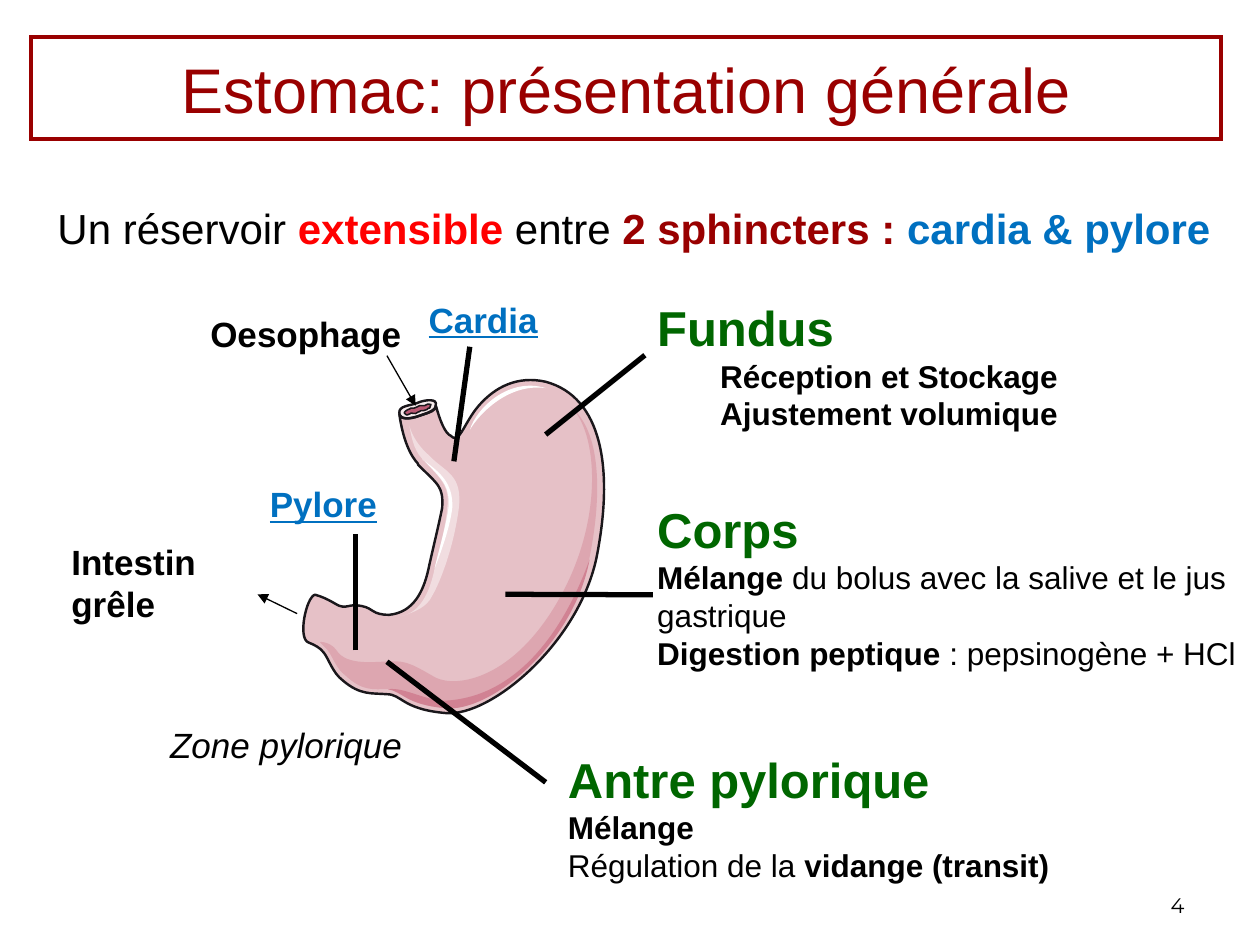
from dataclasses import dataclass

from lxml import etree
from pptx import Presentation
from pptx.dml.color import RGBColor
from pptx.enum.shapes import MSO_CONNECTOR, MSO_SHAPE
from pptx.enum.text import MSO_ANCHOR, PP_ALIGN
from pptx.oxml.ns import qn
from pptx.util import Cm, Pt

STRAIGHT = MSO_CONNECTOR.STRAIGHT
RECTANGLE = MSO_SHAPE.RECTANGLE
TOP, MIDDLE, BOTTOM = MSO_ANCHOR.TOP, MSO_ANCHOR.MIDDLE, MSO_ANCHOR.BOTTOM
LEFT, CENTER, RIGHT = PP_ALIGN.LEFT, PP_ALIGN.CENTER, PP_ALIGN.RIGHT


@dataclass(frozen=True)
class Theme:
    font: str = "Arial"
    number_font: str = "Montserrat"
    black: str = "000000"
    dark_red: str = "990000"
    red: str = "FF0000"
    blue: str = "0070C0"
    green: str = "006600"
    contour: str = "1A171B"
    tissue: str = "E6C1C7"
    shade: str = "DDA6B0"
    deep_shade: str = "D18293"
    gleam: str = "F1DDE0"
    bright_gleam: str = "FFFFFF"
    rim: str = "F7ECED"
    lumen: str = "BB5A74"
    title: int = 36
    region: int = 28
    lead: int = 24
    label: int = 20
    detail: int = 18
    number: int = 12


THEME = Theme()
OUTLINE_UNIT = Cm(0.0254)

STOMACH = (
    (245, 510), (250, 512, 254, 514, 257, 518), (261, 523, 264, 534, 272, 540),
    (286, 552, 295, 550, 307, 551), (319, 551, 319, 563, 354, 566),
    (390, 569, 461, 509, 474, 440), (487, 372, 478, 315, 433, 303),
    (411, 298, 393, 307, 380, 322), (372, 331, 367, 344, 363, 347),
    (361, 348, 360, 348, 358, 346), (353, 344, 349, 333, 346, 322),
    (346, 326, 342, 327, 333, 330), (325, 333, 318, 333, 317, 329),
    (319, 343, 323, 357, 330, 366), (331, 367, 332, 368, 332, 369),
    (348, 385, 352, 386, 351, 403), (348, 418, 343, 438, 340, 452),
    (336, 470, 328, 486, 309, 488), (295, 488, 297, 483, 287, 481),
    (277, 479, 276, 483, 270, 481), (268, 481, 261, 475, 250, 472),
    (243, 474, 236, 507, 245, 510),
)
LOWER_SHADE = (
    (254, 510), (256, 512, 258, 514, 260, 516), (264, 521, 267, 531, 274, 536),
    (288, 549, 296, 547, 308, 547), (320, 549, 321, 559, 353, 562),
    (388, 566, 455, 512, 468, 442), (478, 392, 477, 342, 453, 323),
    (474, 342, 480, 411, 444, 475), (408, 539, 363, 546, 346, 538),
    (330, 529, 323, 524, 310, 525), (298, 525, 275, 529, 267, 516),
    (262, 509, 252, 509, 254, 510),
)
GLEAM_TIP = ((322, 488), (320, 488, 318, 489, 317, 489), (318, 489, 320, 488, 322, 488))
INNER_GLEAM = (
    (335, 364), (335, 365, 336, 366, 337, 366), (352, 382, 357, 387, 355, 403),
    (354, 418, 348, 438, 345, 451), (342, 467, 335, 484, 322, 488),
    (328, 486, 339, 482, 343, 473), (350, 461, 360, 434, 364, 405),
    (368, 376, 353, 375, 340, 361), (333, 355, 327, 346, 325, 338),
    (326, 344, 328, 357, 335, 364),
)
BRIGHT_GLEAM = (
    (345, 451), (348, 438, 354, 418, 356, 403), (357, 387, 353, 382, 337, 366),
    (348, 374, 360, 383, 359, 403), (357, 422, 345, 451, 345, 451),
)
DEEP_SHADE = (
    (308, 547), (320, 549, 322, 559, 353, 562), (388, 566, 455, 513, 468, 444),
    (461, 463, 429, 551, 355, 556), (339, 557, 321, 545, 308, 547),
)
FUNDUS_GLEAM = ((433, 308), (404, 299, 378, 324, 373, 341), (380, 329, 403, 304, 433, 308))
RIM = (
    (317, 328), (317, 333, 325, 333, 333, 330), (342, 327, 347, 325, 346, 320),
    (345, 316, 335, 318, 331, 320), (326, 322, 316, 322, 317, 328),
)
LUMEN = (
    (321, 328), (321, 329, 324, 330, 324, 329), (325, 329, 326, 328, 326, 328),
    (326, 328, 327, 328, 327, 328), (329, 329, 331, 328, 332, 327),
    (332, 327, 333, 327, 334, 326), (335, 326, 335, 326, 336, 326),
    (337, 325, 338, 326, 339, 325), (339, 325, 339, 324, 340, 324),
    (340, 324, 340, 324, 341, 324), (342, 323, 342, 322, 342, 321),
    (340, 320, 339, 321, 337, 322), (335, 322, 334, 322, 333, 322),
    (332, 323, 332, 323, 331, 323), (330, 324, 328, 324, 326, 324),
    (326, 324, 325, 325, 324, 325), (324, 325, 320, 327, 321, 328),
)


def rgb(code):
    return RGBColor.from_string(code)


def run(text, **style):
    return text, style


def bend_segments(part):
    segments = list(part._element.iter(qn("a:lnTo")))
    for first, second, third in zip(*[iter(segments)] * 3):
        first.tag = qn("a:cubicBezTo")
        for segment in (second, third):
            first.append(segment[0])
            segment.getparent().remove(segment)


def add_outline(group, outline, fill=None, width=None):
    start, *curves = outline
    builder = group.shapes.build_freeform(*start, scale=OUTLINE_UNIT)
    builder.add_line_segments(
        [curve[i:i + 2] for curve in curves for i in (0, 2, 4)], close=True)
    part = builder.convert_to_shape()
    bend_segments(part)
    part.shadow.inherit = False
    if fill:
        part.fill.solid()
        part.fill.fore_color.rgb = rgb(fill)
    else:
        part.fill.background()
    if width:
        part.line.color.rgb = rgb(THEME.contour)
        part.line.width = Pt(width)
    else:
        part.line.fill.background()


def add_stomach(slide):
    stomach = slide.shapes.add_group_shape()
    for outline, fill in (
        (STOMACH, THEME.tissue), (LOWER_SHADE, THEME.shade),
        (GLEAM_TIP, THEME.gleam), (INNER_GLEAM, THEME.gleam),
        (BRIGHT_GLEAM, THEME.bright_gleam), (DEEP_SHADE, THEME.deep_shade),
        (FUNDUS_GLEAM, THEME.bright_gleam), (RIM, THEME.rim), (LUMEN, THEME.lumen),
    ):
        add_outline(stomach, outline, fill=fill)
    for outline, width in ((RIM, 1.38), (LUMEN, 0.88), (STOMACH, 1.38)):
        add_outline(stomach, outline, width=width)


def add_line(slide, start, end, width=3, arrow=False):
    pointer = slide.shapes.add_connector(STRAIGHT, *map(Cm, start + end))
    pointer.line.color.rgb = rgb(THEME.black)
    pointer.line.width = Pt(width)
    if arrow:
        etree.SubElement(pointer.line._get_or_add_ln(), qn("a:tailEnd"), type="triangle")
    etree.SubElement(pointer._element.spPr, qn("a:effectLst"))


def add_text(slide, box, *paragraphs, size=THEME.label, color=THEME.black, font=THEME.font,
             bold=False, italic=False, underline=False, align=LEFT, anchor=TOP,
             wrap=True, border=None, indent=0):
    place = tuple(map(Cm, box))
    if border:
        holder = slide.shapes.add_shape(RECTANGLE, *place)
        holder.shadow.inherit = False
        holder.fill.background()
        holder.line.color.rgb = rgb(border)
        holder.line.width = Pt(2.25)
        etree.SubElement(holder.line._get_or_add_ln(), qn("a:miter"), lim="800000")
    else:
        holder = slide.shapes.add_textbox(*place)
    frame = holder.text_frame
    frame.word_wrap = wrap
    frame.vertical_anchor = anchor
    for index, runs in enumerate(paragraphs):
        paragraph = frame.add_paragraph() if index else frame.paragraphs[0]
        paragraph.alignment = align
        if index and indent:
            paragraph.level = 1
            paragraph._p.get_or_add_pPr().set("marL", str(Cm(indent)))
        for text, style in [run(runs)] if isinstance(runs, str) else runs:
            piece = paragraph.add_run()
            piece.text = text
            piece.font.name = font
            piece.font.size = Pt(style.get("size", size))
            piece.font.color.rgb = rgb(style.get("color", color))
            piece.font.bold = style.get("bold", bold)
            piece.font.italic = italic
            piece.font.underline = underline


def add_region(slide, box, name, *details, indent=0):
    heading = [run(name, size=THEME.region, color=THEME.green, bold=True)]
    add_text(slide, box, heading, *details, size=THEME.detail, indent=indent)


def main():
    deck = Presentation()
    deck.slide_width, deck.slide_height = Cm(25.4), Cm(19.05)
    slide = deck.slides.add_slide(deck.slide_layouts[6])

    add_text(slide, (18.21, 17.35, 5.92, 1.27), "4", size=THEME.number,
             font=THEME.number_font, align=RIGHT, anchor=BOTTOM)
    add_text(slide, (0.62, 0.75, 24, 2.06), "Estomac: présentation générale",
             size=THEME.title, color=THEME.dark_red, border=THEME.dark_red,
             align=CENTER, anchor=MIDDLE)
    add_text(slide, (0.91, 3.96, 23.98, 1.3), [
        run("Un réservoir "), run("extensible", color=THEME.red, bold=True), run(" entre "),
        run("2 sphincters : ", color=THEME.dark_red, bold=True),
        run("cardia & pylore", color=THEME.blue, bold=True),
    ], size=THEME.lead, wrap=False)

    add_stomach(slide)
    for start, end in (
        ((11, 8.76), (13, 7.16)), ((10.19, 11.98), (13.16, 11.99)),
        ((7.8, 13.34), (11, 15.77)), ((9.15, 9.3), (9.47, 6.99)),
        ((7.17, 13.11), (7.17, 10.77)),
    ):
        add_line(slide, start, end)
    add_line(slide, (7.8, 7.17), (8.38, 8.18), width=0.75, arrow=True)
    add_line(slide, (5.99, 12.37), (5.19, 11.98), width=0.75, arrow=True)

    add_region(slide, (13, 5.88, 10.21, 3), "Fundus",
               [run("Réception et Stockage", bold=True)],
               [run("Ajustement volumique", bold=True)], indent=1.27)
    add_region(slide, (13, 9.94, 12.4, 3.73), "Corps",
               [run("Mélange", bold=True),
                run(" du bolus avec la salive et le jus gastrique")],
               [run("Digestion peptique", bold=True), run(" : pepsinogène + HCl")])
    add_region(slide, (11.2, 14.98, 13.16, 3), "Antre pylorique",
               [run("Mélange", bold=True)],
               [run("Régulation de la "), run("vidange (transit)", bold=True)])

    add_text(slide, (3.99, 6.17, 4.37, 1.09), "Oesophage", bold=True, wrap=False)
    add_text(slide, (1.19, 10.77, 4.6, 1.09), "Intestin grêle", bold=True)
    add_text(slide, (3.18, 14.46, 5.18, 1.09), "Zone pylorique", italic=True, wrap=False)
    for name, box in (("Cardia", (8.39, 5.89, 2.79, 1.09)), ("Pylore", (5.19, 9.61, 3.38, 1.09))):
        add_text(slide, box, name, color=THEME.blue, bold=True, underline=True)

    deck.save("out.pptx")


if __name__ == "__main__":
    main()
